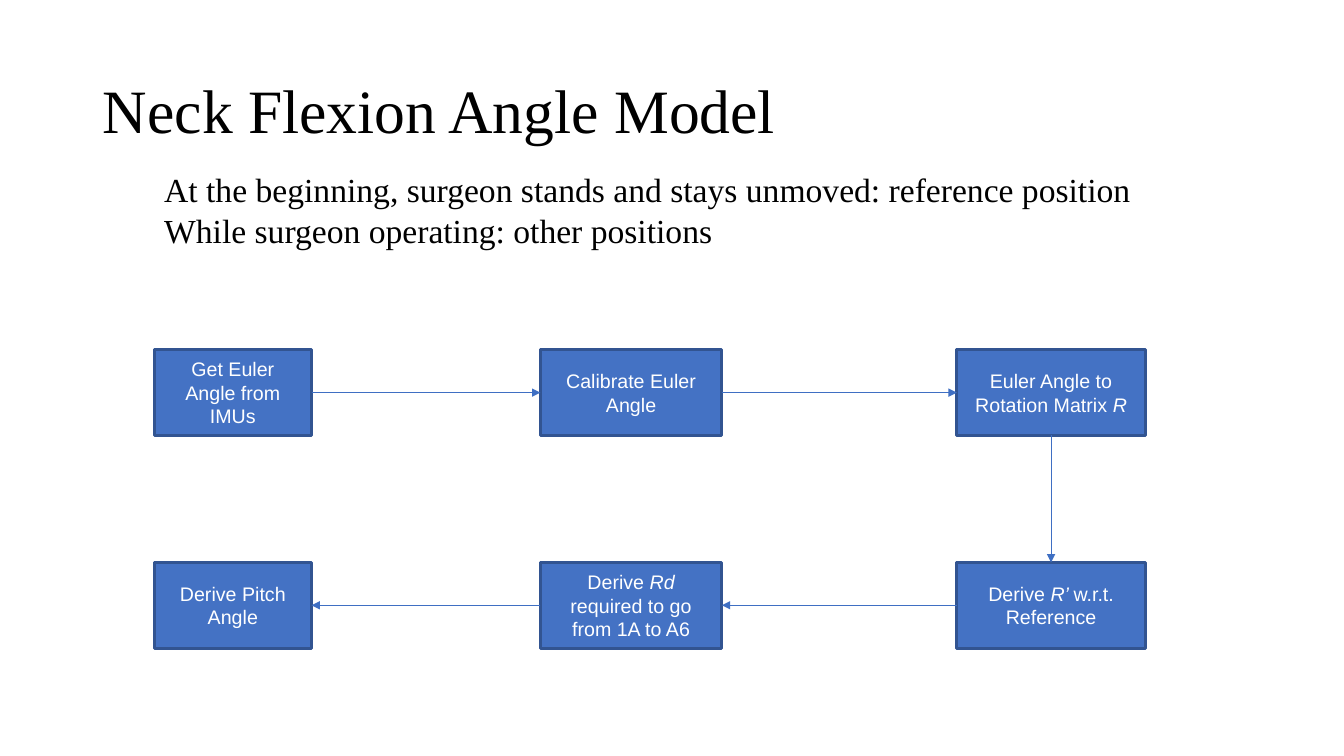
from dataclasses import dataclass
from itertools import pairwise

from lxml import etree
from pptx import Presentation
from pptx.dml.color import RGBColor
from pptx.enum import shapes, text
from pptx.oxml import ns
from pptx.util import Inches, Pt

TOP, BOTTOM, LEFT, RIGHT = 0, 2, 1, 3
STEP_HEIGHT = 0.85
COLUMNS = [(1.53, 1.56), (5.36, 1.8), (9.49, 1.87)]
ROWS = [3.47, 5.58]


@dataclass
class Step:
    column: int
    row: int
    runs: list[tuple[str, bool]]


STEPS = [
    Step(0, 0, [("Get Euler Angle from IMUs", False)]),
    Step(1, 0, [("Calibrate Euler Angle", False)]),
    Step(2, 0, [("Euler Angle to Rotation Matrix ", False), ("R", True)]),
    Step(2, 1, [("Derive ", False), ("R’ ", True), ("w.r.t. Reference", False)]),
    Step(1, 1, [("Derive ", False), ("Rd", True), (" required to go from 1A to A6", False)]),
    Step(0, 1, [("Derive Pitch Angle", False)]),
]


def color(hex_code: str) -> RGBColor:
    return RGBColor.from_string(hex_code)


def write(frame, paragraphs: list[list[tuple[str, bool]]], *, size: float, font: str, ink: str,
          align=text.PP_ALIGN.LEFT, anchor=text.MSO_ANCHOR.TOP,
          spacing: float = 1.0, wrap: bool = True) -> None:
    frame.auto_size = text.MSO_AUTO_SIZE.NONE
    frame.word_wrap = wrap
    frame.vertical_anchor = anchor
    for index, runs in enumerate(paragraphs):
        paragraph = frame.add_paragraph() if index else frame.paragraphs[0]
        paragraph.alignment = align
        paragraph.line_spacing = spacing
        for words, italic in runs:
            run = paragraph.add_run()
            run.text = words
            run.font.name = font
            run.font.size = Pt(size)
            run.font.italic = italic
            run.font.color.rgb = color(ink)


def draw_step(slide, step: Step):
    left, width = COLUMNS[step.column]
    box = slide.shapes.add_shape(shapes.MSO_SHAPE.RECTANGLE, Inches(left), Inches(ROWS[step.row]),
                                 Inches(width), Inches(STEP_HEIGHT))
    box.shadow.inherit = False
    box.fill.solid()
    box.fill.fore_color.rgb = color("4472C4")
    box.line.color.rgb = color("325491")
    box.line.width = Pt(2)
    write(box.text_frame, [step.runs], size=14, font="Arial", ink="FFFFFF",
          align=text.PP_ALIGN.CENTER, anchor=text.MSO_ANCHOR.MIDDLE)
    return box


def draw_arrow(slide, source, target, exit_side: int, entry_side: int) -> None:
    arrow = slide.shapes.add_connector(shapes.MSO_CONNECTOR.STRAIGHT, 0, 0, 0, 0)
    arrow.begin_connect(source, exit_side)
    arrow.end_connect(target, entry_side)
    arrow.line.color.rgb = color("3F6FC3")
    arrow.line.width = Pt(0.75)
    etree.SubElement(arrow.line._get_or_add_ln(), ns.qn("a:tailEnd"), type="triangle")
    etree.SubElement(arrow._element.spPr, ns.qn("a:effectLst"))


def sides(source: Step, target: Step) -> tuple[int, int]:
    if source.row != target.row:
        return BOTTOM, TOP
    return (RIGHT, LEFT) if source.column < target.column else (LEFT, RIGHT)


def main() -> None:
    deck = Presentation()
    deck.slide_width, deck.slide_height = Inches(13.33), Inches(7.5)
    slide = deck.slides.add_slide(deck.slide_layouts.get_by_name("Title Only"))

    title = slide.shapes.title
    title.left, title.top = Inches(0.92), Inches(0.4)
    title.width, title.height = Inches(11.5), Inches(1.45)
    write(title.text_frame, [[("Neck Flexion Angle Model", False)]], size=44,
          font="Times New Roman", ink="000000", anchor=text.MSO_ANCHOR.MIDDLE, spacing=0.9)

    boxes = [draw_step(slide, step) for step in STEPS]
    for (source, source_box), (target, target_box) in pairwise(zip(STEPS, boxes)):
        draw_arrow(slide, source_box, target_box, *sides(source, target))

    positions = slide.shapes.add_textbox(Inches(1.53), Inches(1.63), Inches(9.88), Inches(1.31))
    write(positions.text_frame, [
        [("At the beginning, surgeon stands and stays unmoved: reference position", False)],
        [("While surgeon operating: other positions", False)],
    ], size=24, font="Times New Roman", ink="000000", wrap=False)

    deck.save("out.pptx")


if __name__ == "__main__":
    main()
